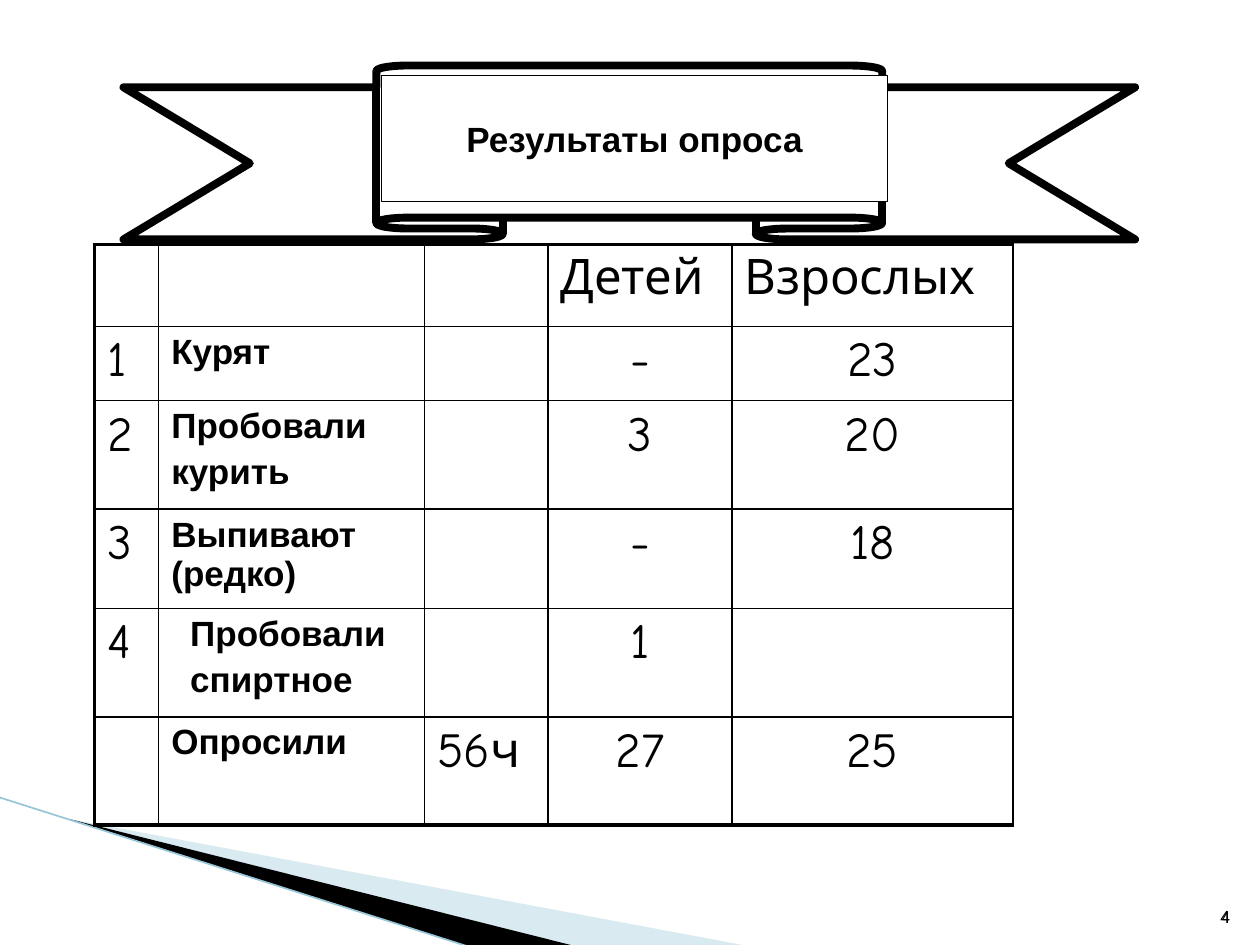
import pptx
import pptx.util
from lxml import etree
from pptx.dml.color import RGBColor
from pptx.enum.shapes import MSO_CONNECTOR, MSO_SHAPE
from pptx.enum.text import MSO_ANCHOR, PP_ALIGN
from pptx.oxml.ns import qn

COLORS = {"ink": "000000", "paper": "FFFFFF", "mist": "A0CBDC", "edge": "97C5D8"}
BODY, HAND = "Arial", "Comic Neue"

# The page is a grid of 100 columns by 75 rows
COLUMNS, ROWS = 100, 75
WIDTH, HEIGHT = pptx.util.Inches(10), pptx.util.Inches(7.5)
LEFT, CENTER, RIGHT = PP_ALIGN.LEFT, PP_ALIGN.CENTER, PP_ALIGN.RIGHT

COLUMN_SPANS = [5.1, 21.1, 9.8, 14.6, 22.3]
ROW_SPANS = [6.5, 5.9, 8.6, 7.9, 8.6, 8.6]
SURVEY = [
    ["", "", "", "Детей", "Взрослых"],
    ["1", "Курят", "", "-", "23"],
    ["2", "Пробовали\nкурить", "", "3", "20"],
    ["3", "Выпивают (редко)", "", "-", "18"],
    ["4", "Пробовали\nспиртное", "", "1", ""],
    ["", "Опросили", "56ч", "27", "25"],
]
INDENTED_ROW = 4


def across(columns):
    return round(WIDTH * columns / COLUMNS)


def down(rows):
    return round(HEIGHT * rows / ROWS)


def place(box):
    left, top, width, height = box
    return across(left), down(top), across(width), down(height)


def color(name):
    return RGBColor.from_string(COLORS[name])


def write(frame, text, size=20, font=BODY, bold=False, align=LEFT, gap=4):
    for index, line in enumerate(text.split("\n")):
        para = frame.add_paragraph() if index else frame.paragraphs[0]
        para.alignment = align
        if index:
            para.space_before = pptx.util.Pt(gap)
        span = para.add_run()
        span.text = line
        span.font.size = pptx.util.Pt(size)
        span.font.name = font
        span.font.bold = bold
        span.font.color.rgb = color("ink")


def outline(shape, width):
    shape.shadow.inherit = False
    shape.line.color.rgb = color("ink")
    shape.line.width = pptx.util.Pt(width)


def add_wedge(page, points, fill, opacity=None):
    corners = [(across(x), down(y)) for x, y in points]
    builder = page.shapes.build_freeform(*corners[0])
    builder.add_line_segments(corners[1:])
    wedge = builder.convert_to_shape()
    wedge.shadow.inherit = False
    wedge.line.fill.background()
    wedge.fill.solid()
    wedge.fill.fore_color.rgb = color(fill)
    if opacity:
        swatch = wedge.fill._xPr.find(".//" + qn("a:srgbClr"))
        etree.SubElement(swatch, qn("a:alpha"), val=str(opacity * 1000))


def add_corner(page, box):
    """Wedges and edge line; the box runs off the lower left corner."""
    left, top, width, height = box
    bottom = top + height
    start = (left + 5.5, top + 1.7)
    add_wedge(page, [start, (left + width, bottom), (left + 45.6, bottom)], "mist", 40)
    add_wedge(page, [start, (left + 45.7, bottom), (left + 37.2, bottom)], "ink")
    edge = page.shapes.add_connector(
        MSO_CONNECTOR.STRAIGHT, across(left), down(top), across(left + 37.1), down(bottom))
    edge.line.color.rgb = color("edge")
    edge.line.width = pptx.util.Pt(0.95)
    etree.SubElement(edge._element.spPr, qn("a:effectLst"))


def add_page_number(page, box, font):
    frame = page.shapes.add_textbox(*place(box)).text_frame
    frame.word_wrap = True
    frame.vertical_anchor = MSO_ANCHOR.BOTTOM
    write(frame, "4", size=10, font=font, align=RIGHT)


def set_borders(cell, widths):
    properties = cell._tc.get_or_add_tcPr()
    for index, (side, width) in enumerate(widths.items()):
        border = etree.Element(qn("a:ln" + side), w=str(pptx.util.Pt(width)))
        fill = etree.SubElement(border, qn("a:solidFill"))
        etree.SubElement(fill, qn("a:srgbClr"), val=COLORS["ink"])
        properties.insert(index, border)


def add_survey(page, box):
    table = page.shapes.add_table(len(SURVEY), len(SURVEY[0]), *place(box)).table
    table.first_row = table.horz_banding = False
    for column, span in zip(table.columns, COLUMN_SPANS):
        column.width = across(span)
    for row, span in zip(table.rows, ROW_SPANS):
        row.height = down(span)
    last = len(SURVEY) - 1
    for r, values in enumerate(SURVEY):
        for c, value in enumerate(values):
            cell = table.cell(r, c)
            cell.fill.background()
            set_borders(cell, {
                "L": 1 if c else 2.25, "R": 1,
                "T": 1 if r else 2.25, "B": 2.25 if r == last else 1})
            if c == 1 and r == INDENTED_ROW:
                cell.margin_left = across(2.5)
            if value and c == 1:
                write(cell.text_frame, value, bold=True)
            elif value:
                write(cell.text_frame, value, size=28, font=HAND,
                      align=CENTER if r and c > 2 else LEFT)


def add_banner(page, box):
    left, top, width, height = box
    # Ribbon
    ribbon = page.shapes.add_shape(MSO_SHAPE.UP_RIBBON, *place(box))
    ribbon.adjustments[0], ribbon.adjustments[1] = 0.125, 0.5
    ribbon.fill.background()
    outline(ribbon, 4.5)
    # Title plate over the middle fold
    plate = page.shapes.add_shape(
        MSO_SHAPE.RECTANGLE, *place((left + 20.5, top + 0.8, width / 2, 10)))
    plate.fill.solid()
    plate.fill.fore_color.rgb = color("paper")
    outline(plate, 0.75)
    plate.text_frame.word_wrap = False
    plate.text_frame.vertical_anchor = MSO_ANCHOR.MIDDLE
    write(plate.text_frame, "Результаты опроса", bold=True, align=CENTER)


def main():
    deck = pptx.Presentation()
    deck.slide_width, deck.slide_height = WIDTH, HEIGHT
    page = deck.slides.add_slide(deck.slide_layouts[6])
    number_box = (94.6, 70.1, 4, 4)
    add_corner(page, (0, 63.3, 59.5, 11.8))
    add_page_number(page, number_box, BODY)
    add_survey(page, (7.5, 19.4, sum(COLUMN_SPANS), sum(ROW_SPANS)))
    add_page_number(page, number_box, HAND)
    add_banner(page, (9.8, 5.2, 80.3, 13.8))
    deck.save("out.pptx")


if __name__ == "__main__":
    main()
